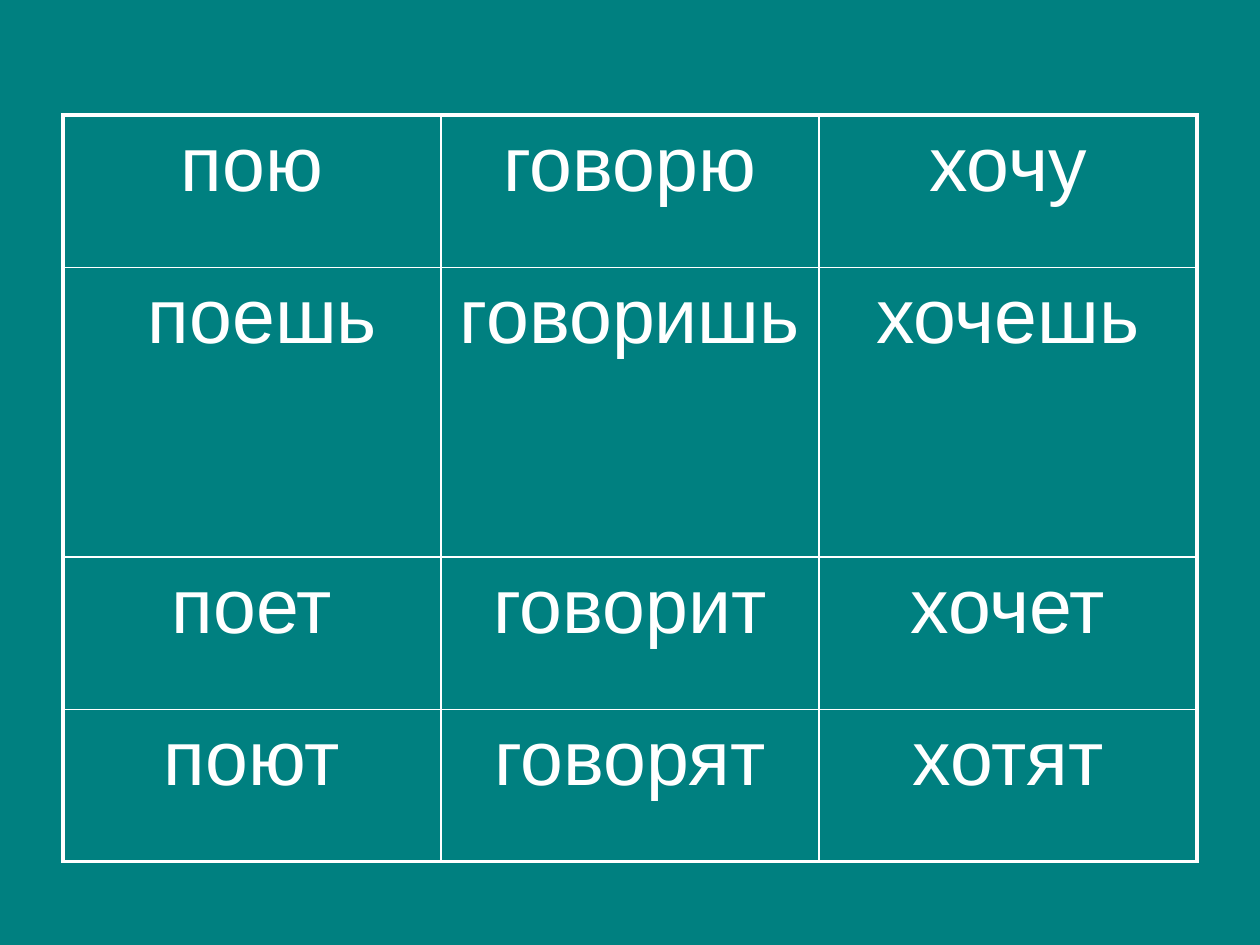
from dataclasses import dataclass

from lxml import etree
from pptx import Presentation
from pptx.dml.color import RGBColor
from pptx.enum.text import MSO_ANCHOR, PP_ALIGN
from pptx.oxml.ns import qn
from pptx.table import _Cell
from pptx.util import Cm, Pt

CENTER = PP_ALIGN.CENTER
TOP = MSO_ANCHOR.TOP
TEAL = RGBColor(0x00, 0x80, 0x80)
WHITE = RGBColor(0xFF, 0xFF, 0xFF)
OUTER_LINE = Pt(2.21)
INNER_LINE = Pt(0.96)
COLUMN_WIDTH = Cm(7.62)
BLANK_LAYOUT = 6


@dataclass(frozen=True)
class VerbRow:
    height: Cm
    forms: tuple[str, str, str]


VERB_ROWS = (
    VerbRow(Cm(3.07), ("пою", "говорю", "хочу")),
    VerbRow(Cm(5.84), (" поешь", "говоришь", "хочешь")),
    VerbRow(Cm(3.07), ("поет", "говорит", "хочет")),
    VerbRow(Cm(3.07), (" поют ", "говорят", "хотят")),
)


def set_borders(cell: _Cell, widths: dict[str, int]) -> None:
    """Draw the sides; the schema wants them in order and before the fill."""
    properties = cell._tc.get_or_add_tcPr()
    for position, (side, width) in enumerate(widths.items()):
        line = etree.Element(qn(f"a:{side}"), w=str(int(width)))
        fill = etree.SubElement(line, qn("a:solidFill"))
        etree.SubElement(fill, qn("a:srgbClr"), val=str(WHITE))
        properties.insert(position, line)


def write_form(cell: _Cell, form: str) -> None:
    cell.fill.background()
    cell.vertical_anchor = TOP
    paragraph = cell.text_frame.paragraphs[0]
    paragraph.text = form
    paragraph.alignment = CENTER
    paragraph.space_before = Pt(8.8)
    paragraph.font.name = "Arial"
    paragraph.font.size = Pt(44)
    paragraph.font.color.rgb = WHITE


def line_width(is_outer: bool) -> int:
    return OUTER_LINE if is_outer else INNER_LINE


def main() -> None:
    deck = Presentation()
    deck.slide_width, deck.slide_height = Cm(25.4), Cm(19.05)
    slide = deck.slides.add_slide(deck.slide_layouts[BLANK_LAYOUT])
    slide.background.fill.solid()
    slide.background.fill.fore_color.rgb = TEAL

    row_count, column_count = len(VERB_ROWS), len(VERB_ROWS[0].forms)
    table = slide.shapes.add_table(
        row_count, column_count, Cm(1.27), Cm(2.32),
        COLUMN_WIDTH * column_count, sum(row.height for row in VERB_ROWS),
    ).table
    table.first_row = False
    table.horz_banding = False
    for column in table.columns:
        column.width = COLUMN_WIDTH

    for row_index, verb_row in enumerate(VERB_ROWS):
        table.rows[row_index].height = verb_row.height
        for column_index, form in enumerate(verb_row.forms):
            cell = table.cell(row_index, column_index)
            write_form(cell, form)
            set_borders(cell, {
                "lnL": line_width(column_index == 0),
                "lnR": line_width(column_index == column_count - 1),
                "lnT": line_width(row_index == 0),
                "lnB": line_width(row_index == row_count - 1),
            })
    deck.save("out.pptx")


if __name__ == "__main__":
    main()
